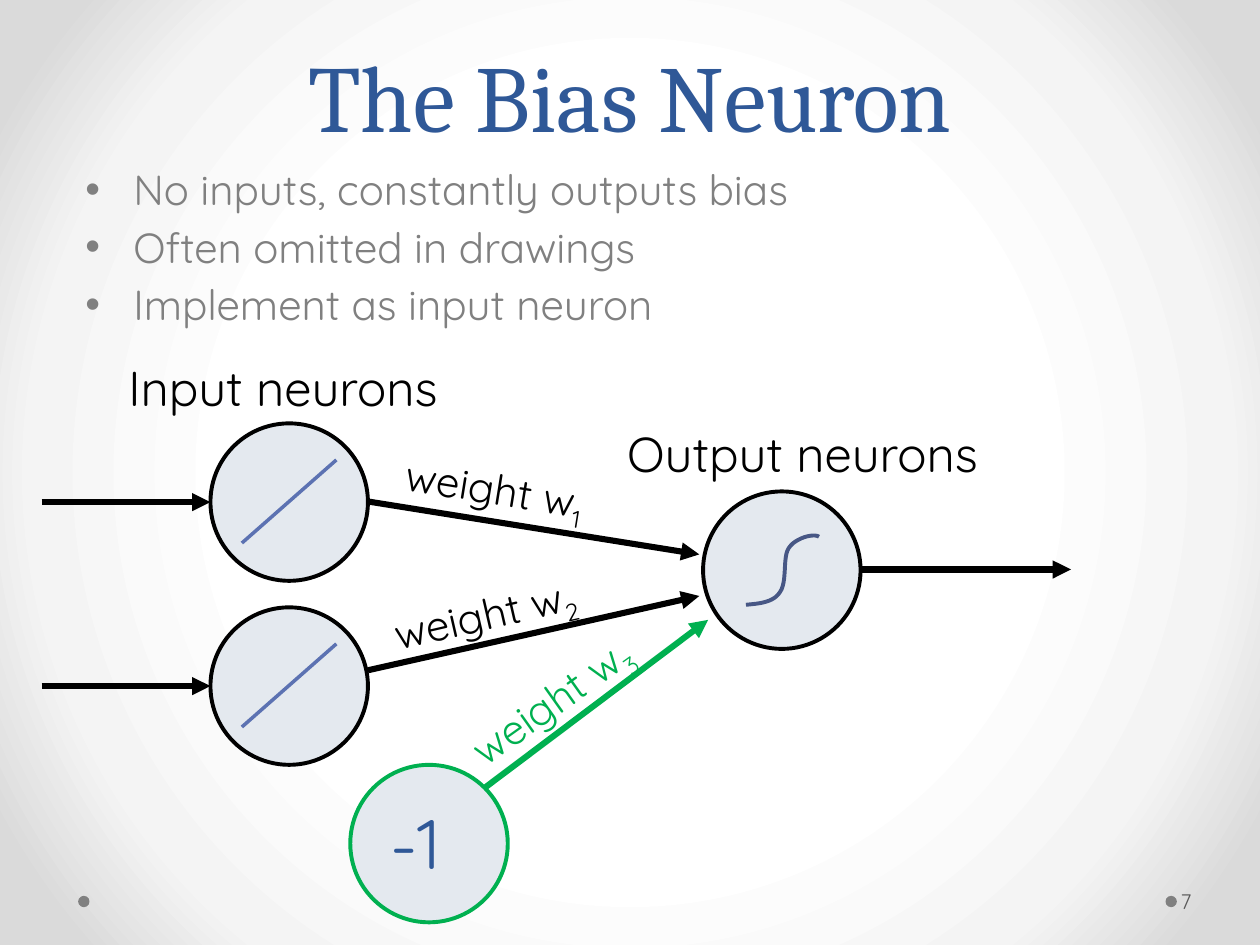
from pptx import Presentation
from pptx.dml.color import RGBColor
from pptx.enum.shapes import MSO_CONNECTOR, MSO_SHAPE
from pptx.enum.text import MSO_ANCHOR, PP_ALIGN
from pptx.oxml import parse_xml
from pptx.oxml.ns import nsdecls
from pptx.util import Inches, Pt
from lxml.etree import SubElement
from pptx.oxml.ns import qn

BLACK = RGBColor(0x00, 0x00, 0x00)
GREEN = RGBColor(0x00, 0xB0, 0x50)
NAVY = RGBColor(0x2F, 0x58, 0x97)
GRAY = RGBColor(0x80, 0x80, 0x80)
DARK_GRAY = RGBColor(0x59, 0x59, 0x59)
PALE = RGBColor(0xE4, 0xE9, 0xEF)
LINEAR_BLUE = RGBColor(0x5C, 0x72, 0xB2)
SIGMOID_BLUE = RGBColor(0x47, 0x57, 0x85)

presentation = Presentation()
presentation.slide_width, presentation.slide_height = Inches(10), Inches(7.5)
slide = presentation.slides.add_slide(presentation.slide_layouts[6])
shapes = slide.shapes

# Grid of 100 columns by 75 rows with square cells
CELL = presentation.slide_width / 100


def add_text(left, top, width, height, text, size, color, font="Quicksand", subscript=None):
    box = shapes.add_textbox(*(round(n * CELL) for n in (left, top, width, height)))
    frame = box.text_frame
    frame.word_wrap = True
    for index, line in enumerate(text.split("\n")):
        paragraph = frame.paragraphs[0] if index == 0 else frame.add_paragraph()
        paragraph.font.name, paragraph.font.size = font, Pt(size)
        paragraph.font.color.rgb = color
        paragraph.add_run().text = line
    if subscript:
        run = paragraph.add_run()
        run.text = subscript
        run.font._element.set("baseline", "-25000")
    return box


def add_line(start, end, color, width, arrow=True):
    line = shapes.add_connector(
        MSO_CONNECTOR.STRAIGHT, *(round(n * CELL) for n in (*start, *end)))
    line.line.color.rgb, line.line.width = color, Pt(width)
    if arrow:
        SubElement(line.line._get_or_add_ln(), qn("a:tailEnd"), type="triangle")
    SubElement(line._element.spPr, qn("a:effectLst"))


# Radial background
stops = "".join(
    f'<a:gs pos="{position}000"><a:srgbClr val="{color}"/></a:gs>'
    for position, color in ((50, "FFFFFF"), (76, "F4F4F4"), (92, "DADADA")))
slide.element.cSld.insert(0, parse_xml(
    f'<p:bg {nsdecls("p", "a")}><p:bgPr><a:gradFill rotWithShape="1">'
    f'<a:gsLst>{stops}</a:gsLst><a:path path="circle">'
    '<a:fillToRect l="50000" t="50000" r="50000" b="50000"/></a:path>'
    '</a:gradFill><a:effectLst/></p:bgPr></p:bg>'))

# Title, slide number and bullets
title = add_text(5, 0, 90, 12.5, "The Bias Neuron", 54, NAVY, "Cambria")
title.text_frame.vertical_anchor = MSO_ANCHOR.BOTTOM
title.text_frame.paragraphs[0].alignment = PP_ALIGN.CENTER
title.text_frame.paragraphs[0].line_spacing = Pt(58)

number = add_text(93.4, 69.5, 6.1, 4, "7", 12, DARK_GRAY)
number.text_frame.margin_left = Inches(0.03)
number.text_frame.vertical_anchor = MSO_ANCHOR.MIDDLE

bullets = add_text(
    5.8, 12.5, 90, 15,
    "No inputs, constantly outputs bias\nOften omitted in drawings\nImplement as input neuron",
    24, GRAY)
for paragraph in bullets.text_frame.paragraphs:
    paragraph.space_before = Pt(4)
    properties = paragraph._p.get_or_add_pPr()
    properties.set("marL", str(Inches(0.38)))
    properties.set("indent", str(-Inches(0.38)))
    SubElement(properties, qn("a:buFont"), typeface="Arial")
    SubElement(properties, qn("a:buChar"), char="•")
    properties.append(properties.find(qn("a:defRPr")))

# Neurons and footer dots: left, top, diameter, fill, outline
NEURON = 12.5
INPUT_LEFT, INPUT_TOPS = 16.7, (33.6, 48.2)
for left, top, diameter, fill, outline in (
        (92.5, 71.1, 0.9, GRAY, None),
        (6.2, 71.1, 0.9, GRAY, None),
        (55.8, 39, NEURON, PALE, BLACK),
        (27.8, 60.7, NEURON, PALE, GREEN),
        *((INPUT_LEFT, top, NEURON, PALE, BLACK) for top in INPUT_TOPS)):
    circle = shapes.add_shape(
        MSO_SHAPE.OVAL, *(round(n * CELL) for n in (left, top, diameter, diameter)))
    circle.shadow.inherit = False
    circle.fill.solid()
    circle.fill.fore_color.rgb = fill
    if outline:
        circle.line.color.rgb, circle.line.width = outline, Pt(2.25)
    else:
        circle.line.fill.background()

# Incoming arrow and linear activation of each input neuron
for top in INPUT_TOPS:
    middle = top + NEURON / 2
    add_line((3.3, middle), (INPUT_LEFT, middle), BLACK, 3.5)
    add_line((INPUT_LEFT + 2.5, top + 9.5), (INPUT_LEFT + 10, top + 2.9), LINEAR_BLUE, 2, False)

# Sigmoid activation: cubic curves sampled as short segments
SIGMOID = (
    ((59.2, 48), (60.3, 47.9), (61.4, 47.8), (61.9, 47)),
    ((61.9, 47), (62.5, 46.2), (62.1, 44.2), (62.6, 43.5)),
    ((62.6, 43.5), (63.1, 42.7), (64.6, 42.3), (65, 42.6)))
STEPS = 12
points = []
for curve in SIGMOID:
    for step in range(1, STEPS + 1):
        t = step / STEPS
        weights = ((1 - t) ** 3, 3 * t * (1 - t) ** 2, 3 * t ** 2 * (1 - t), t ** 3)
        points.append([sum(w * point[axis] for w, point in zip(weights, curve)) * CELL
                       for axis in (0, 1)])
builder = shapes.build_freeform(*(round(n * CELL) for n in SIGMOID[0][0]))
builder.add_line_segments(points, close=False)
sigmoid = builder.convert_to_shape()
sigmoid.shadow.inherit = False
sigmoid.fill.background()
sigmoid.line.color.rgb, sigmoid.line.width = SIGMOID_BLUE, Pt(2.25)

# Output arrow and captions
add_line((68.3, 45.2), (85, 45.2), BLACK, 3.5)
add_text(9.2, 27.9, 31.1, 5.7, "Input neurons", 28, BLACK)
add_text(48.8, 33.1, 35.3, 5.7, "Output neurons", 28, BLACK)
add_text(30, 63, 8.2, 7.7, "-1", 40, NAVY)

# Weighted connections: arrow ends, label place, rotation
for index, (start, end, left, top, width, rotation, color) in enumerate((
        ((29.2, 39.8), (55.5, 44), 31.1, 36.8, 23.3, 9.2, BLACK),
        ((29.2, 53.2), (55.5, 47.3), 30.1, 45.8, 20.4, -13, BLACK),
        ((38.5, 62.5), (56.2, 49.2), 35.1, 52, 20.4, -35.5, GREEN)), start=1):
    add_line(start, end, color, 3.5)
    label = add_text(left, top, width, 5, "weight w", 24, color, subscript=str(index))
    label.rotation = rotation

presentation.save("out.pptx")
